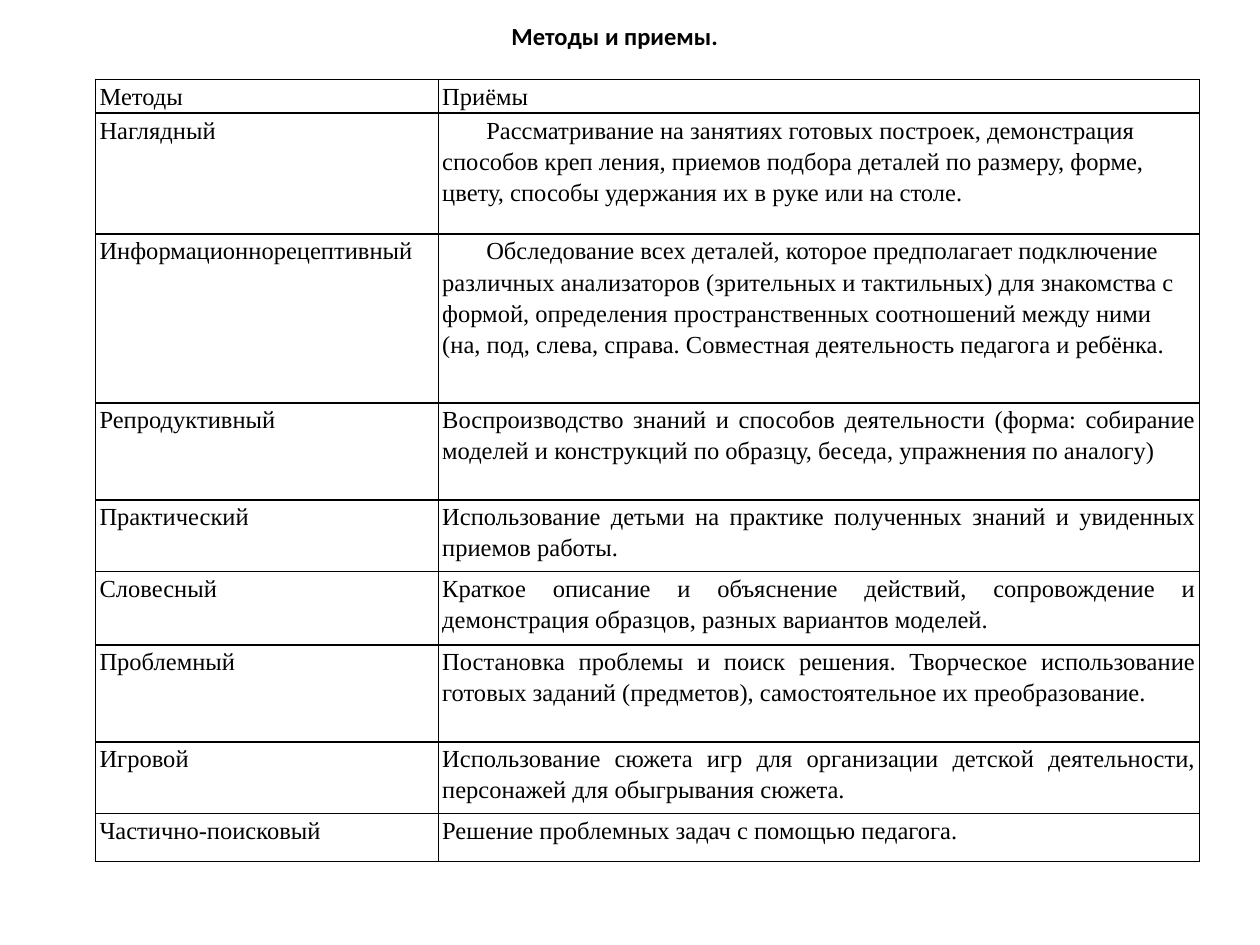
from lxml import etree
from pptx import Presentation
from pptx import util as u
from pptx.dml import color
from pptx.enum import text
from pptx.oxml import ns

SLIDE_W, SLIDE_H = 10, 7.5
BLACK = "000000"
COLUMN_WIDTHS = [2.72, 6.04]
ROW_HEIGHTS = [0.21, 0.96, 1.34, 0.77, 0.57, 0.58, 0.77, 0.57, 0.38]
INDENTED_ROWS = (1, 2)
METHODS = [
    ("Методы", "Приёмы"),
    ("Наглядный", "Рассматривание на занятиях готовых построек, демонстрация способов "
     "креп ления, приемов подбора деталей по размеру, форме, цвету, способы "
     "удержания их в руке или на столе."),
    ("Информационнорецептивный", "Обследование всех деталей, которое предполагает "
     "подключение различных анализаторов (зрительных и тактильных) для знакомства с "
     "формой, определения пространственных соотношений между ними (на, под, слева, "
     "справа. Совместная деятельность педагога и ребёнка."),
    ("Репродуктивный", "Воспроизводство знаний и способов деятельности (форма: "
     "собирание моделей и конструкций по образцу, беседа, упражнения по аналогу)"),
    ("Практический", "Использование детьми на практике полученных знаний и увиденных "
     "приемов работы."),
    ("Словесный", "Краткое описание и объяснение действий, сопровождение и "
     "демонстрация образцов, разных вариантов моделей."),
    ("Проблемный", "Постановка проблемы и поиск решения. Творческое использование "
     "готовых заданий (предметов), самостоятельное их преобразование."),
    ("Игровой", "Использование сюжета игр для организации детской деятельности, "
     "персонажей для обыгрывания сюжета."),
    ("Частично-поисковый", "Решение проблемных задач с помощью педагога."),
]


def across(share):
    return u.Inches(SLIDE_W * share)


def down(share):
    return u.Inches(SLIDE_H * share)


def paint(target, hex_color):
    target.rgb = color.RGBColor.from_string(hex_color)


def write(paragraph, words, font_name, align, spacing, bold=False):
    paragraph.alignment = align
    paragraph.line_spacing = spacing
    run = paragraph.add_run()
    run.text = words
    run.font.name = font_name
    run.font.size = u.Pt(14)
    run.font.bold = bold
    paint(run.font.color, BLACK)


def add_heading(slide):
    heading = slide.shapes.add_textbox(across(0.028), down(0.019), across(0.93), down(0.913))
    frame = heading.text_frame
    frame.word_wrap = True
    frame.margin_right = across(0.02)
    write(frame.paragraphs[0], "Методы и приемы.", "Calibri",
          text.PP_ALIGN.CENTER, 0.9, bold=True)


def outline(cell):
    properties = cell._tc.get_or_add_tcPr()
    for position, side in enumerate(("lnL", "lnR", "lnT", "lnB")):
        border = etree.Element(ns.qn(f"a:{side}"), w=str(u.Pt(1)))
        fill = etree.SubElement(border, ns.qn("a:solidFill"))
        etree.SubElement(fill, ns.qn("a:srgbClr"), val=BLACK)
        properties.insert(position, border)


def fill_cell(cell, words, indented):
    cell.margin_left = cell.margin_right = u.Inches(0.03)
    cell.margin_top = cell.margin_bottom = 0
    cell.fill.background()
    outline(cell)
    paragraph = cell.text_frame.paragraphs[0]
    if indented:
        paragraph._p.get_or_add_pPr().set("indent", str(u.Inches(0.35)))
    align = text.PP_ALIGN.LEFT if indented else text.PP_ALIGN.JUSTIFY
    write(paragraph, words, "Times New Roman", align, 1.15)


def add_methods(slide):
    frame = slide.shapes.add_table(
        len(METHODS), len(COLUMN_WIDTHS), across(0.076), down(0.084),
        u.Inches(sum(COLUMN_WIDTHS)), u.Inches(sum(ROW_HEIGHTS)))
    methods = frame.table
    methods.first_row = methods.horz_banding = False
    for column, width in zip(methods.columns, COLUMN_WIDTHS):
        column.width = u.Inches(width)
    for index, (height, entries) in enumerate(zip(ROW_HEIGHTS, METHODS)):
        methods.rows[index].height = u.Inches(height)
        for place, words in enumerate(entries):
            fill_cell(methods.cell(index, place), words,
                      place == 1 and index in INDENTED_ROWS)


def main():
    deck = Presentation()
    deck.slide_width, deck.slide_height = across(1), down(1)
    slide = deck.slides.add_slide(deck.slide_layouts[6])
    add_heading(slide)
    add_methods(slide)
    deck.save("out.pptx")


if __name__ == "__main__":
    main()
